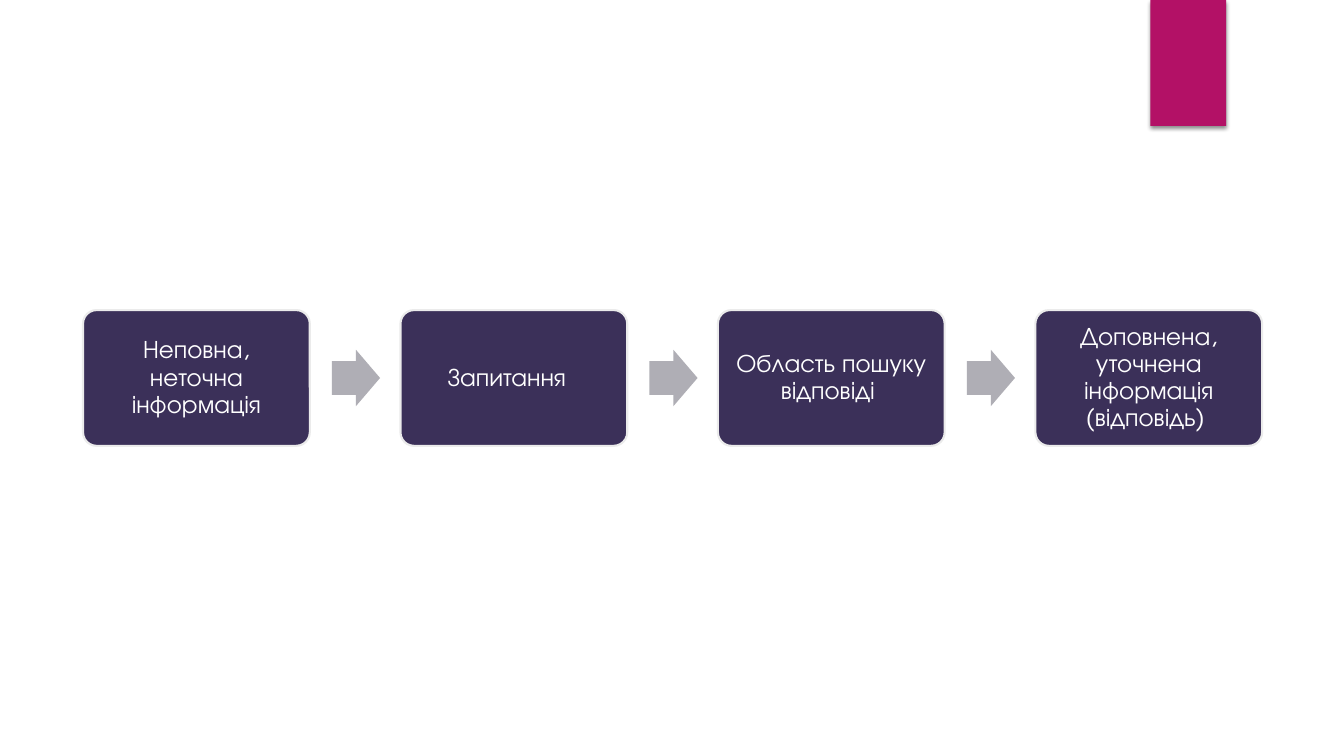
from lxml import etree
from pptx import Presentation
from pptx.dml.color import RGBColor
from pptx.enum.shapes import MSO_SHAPE
from pptx.enum.text import MSO_ANCHOR, PP_ALIGN
from pptx.oxml import parse_xml
from pptx.util import Pt

RECTANGLE = MSO_SHAPE.RECTANGLE
ROUNDED = MSO_SHAPE.ROUNDED_RECTANGLE
ARROW = MSO_SHAPE.RIGHT_ARROW
MIDDLE = MSO_ANCHOR.MIDDLE
CENTER = PP_ALIGN.CENTER

FONT = "TeX Gyre Adventor"
DRAWING_NS = "http://schemas.openxmlformats.org/drawingml/2006/main"

STEPS = [
    "Неповна, неточна інформація",
    "Запитання  ",
    "Область пошуку відповіді ",
    "Доповнена, уточнена інформація (відповідь) ",
]
STEP_LEFT, STEP_PITCH = 59.3, 226.75
STEP_WIDTH, STEP_HEIGHT = 162, 97
ARROW_WIDTH, ARROW_HEIGHT = 34.4, 40.2
ARROW_OFFSET = 177.8
FLOW_MIDDLE = 270


def color(value):
    return RGBColor.from_string(value)


def add_block(page, kind, left, top, width, height, fill):
    """Add a filled preset shape without outline or shadow."""
    block = page.shapes.add_shape(kind, Pt(left), Pt(top), Pt(width), Pt(height))
    block.shadow.inherit = False
    block.fill.solid()
    block.fill.fore_color.rgb = color(fill)
    block.line.fill.background()
    return block


def add_soft_shadow(block):
    effects = block._element.spPr.find(f"{{{DRAWING_NS}}}effectLst")
    shadow = parse_xml(
        f'<a:outerShdw xmlns:a="{DRAWING_NS}" blurRad="{Pt(3)}" dist="{Pt(2)}" '
        'dir="5400000" algn="ctr" rotWithShape="0"/>'
    )
    tint = etree.SubElement(shadow, f"{{{DRAWING_NS}}}srgbClr", val="000000")
    etree.SubElement(tint, f"{{{DRAWING_NS}}}alpha", val="45000")
    effects.append(shadow)


def add_step(page, left, text):
    top = FLOW_MIDDLE - STEP_HEIGHT / 2
    box = add_block(page, ROUNDED, left, top, STEP_WIDTH, STEP_HEIGHT, "3B3059")
    box.adjustments[0] = 0.1
    box.line.color.rgb = color("EBEBEB")
    box.line.width = Pt(1.5)

    frame = box.text_frame
    frame.word_wrap = True
    frame.vertical_anchor = MIDDLE
    frame.margin_left = frame.margin_right = Pt(5.4)
    frame.margin_top = frame.margin_bottom = Pt(5.4)

    para = frame.paragraphs[0]
    para.alignment = CENTER
    para.line_spacing = 0.9
    span = para.add_run()
    span.text = text
    span.font.name = FONT
    span.font.size = Pt(18)
    span.font.color.rgb = color("FFFFFF")


def add_flow_arrow(page, left):
    top = FLOW_MIDDLE - ARROW_HEIGHT / 2
    arrow = add_block(page, ARROW, left, top, ARROW_WIDTH, ARROW_HEIGHT, "AFAEB5")
    arrow.adjustments[0] = 0.6
    arrow.adjustments[1] = 0.5


def main():
    deck = Presentation()
    deck.slide_width, deck.slide_height = Pt(960), Pt(540)
    page = deck.slides.add_slide(deck.slide_layouts[6])

    ribbon = add_block(page, RECTANGLE, 821.8, 0, 54, 90, "B31166")
    add_soft_shadow(ribbon)

    for index, text in enumerate(STEPS):
        left = STEP_LEFT + index * STEP_PITCH
        add_step(page, left, text)
        if index < len(STEPS) - 1:
            add_flow_arrow(page, left + ARROW_OFFSET)

    deck.save("out.pptx")


if __name__ == "__main__":
    main()
